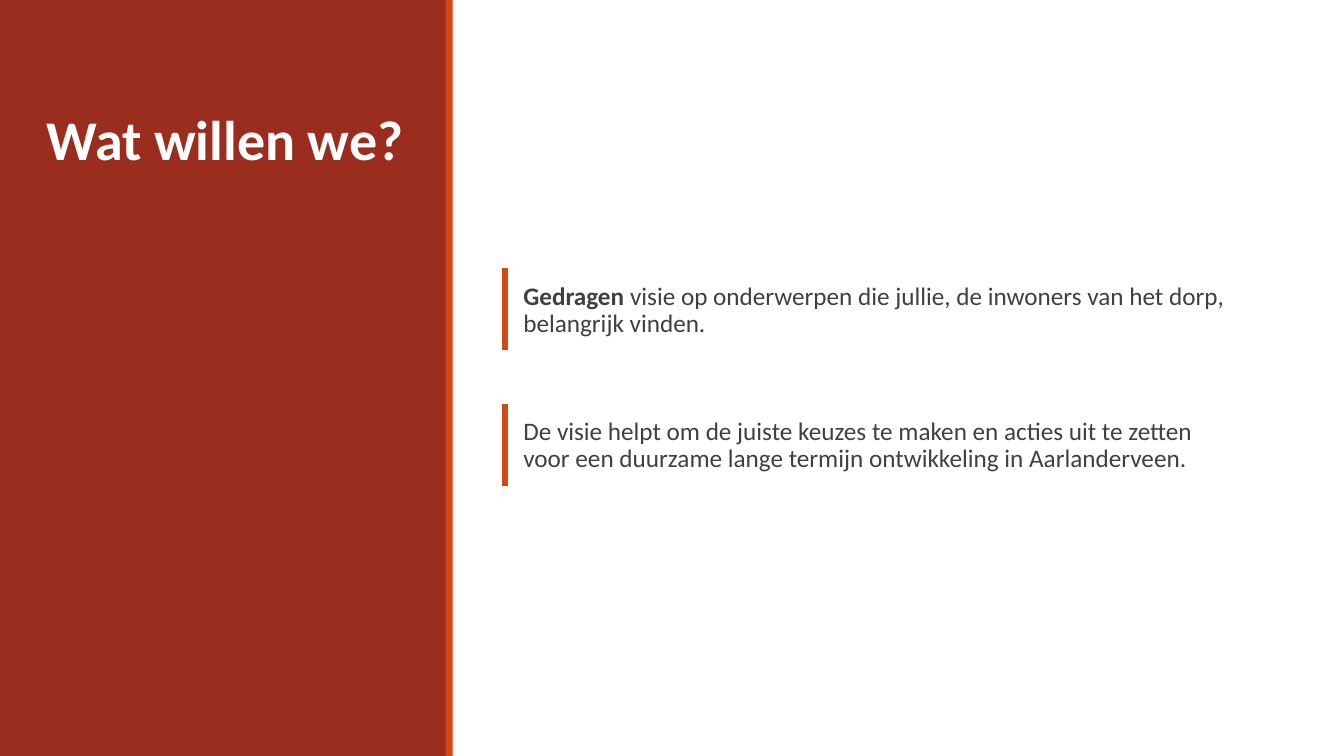
import pptx
import pptx.dml.color
import pptx.enum.shapes
import pptx.enum.text
import pptx.oxml
import pptx.util

Inches = pptx.util.Inches
Pt = pptx.util.Pt
RGBColor = pptx.dml.color.RGBColor
Anchor = pptx.enum.text.MSO_ANCHOR

BRICK = RGBColor(0x9B, 0x2D, 0x1F)
ORANGE = RGBColor(0xD3, 0x48, 0x17)
WHITE = RGBColor(0xFF, 0xFF, 0xFF)
GREY = RGBColor(0x40, 0x40, 0x40)

STATEMENTS = [
    [("Gedragen ", True),
     ("visie op onderwerpen die jullie, de inwoners van het dorp, belangrijk vinden.", False)],
    [("De visie helpt om de juiste keuzes te maken en acties uit te zetten voor een "
      "duurzame lange termijn ontwikkeling in Aarlanderveen.", False)],
]


class VisionSlide:
    font = "Calibri"

    def __init__(self, deck):
        self.page = deck.slides.add_slide(deck.slide_layouts[5])

    def place(self, shape, left, top, width, height):
        shape.left, shape.top = Inches(left), Inches(top)
        shape.width, shape.height = Inches(width), Inches(height)

    def add_span(self, para, text, size, color, bold):
        span = para.add_run()
        span.text = text
        span.font.name = self.font
        span.font.size = Pt(size)
        span.font.color.rgb = color
        span.font.bold = bold

    def panel(self, left, width, color):
        shape = self.page.shapes.add_shape(
            pptx.enum.shapes.MSO_SHAPE.RECTANGLE,
            Inches(left), 0, Inches(width), Inches(7.5))
        shape.shadow.inherit = False
        shape.fill.solid()
        shape.fill.fore_color.rgb = color
        shape.line.fill.background()

    def title(self, text, left, top, width, height):
        box = self.page.shapes.title
        self.place(box, left, top, width, height)
        frame = box.text_frame
        frame.word_wrap = True
        frame.auto_size = pptx.enum.text.MSO_AUTO_SIZE.NONE
        frame.vertical_anchor = Anchor.TOP
        para = frame.paragraphs[0]
        para.alignment = pptx.enum.text.PP_ALIGN.LEFT
        para.space_before = Pt(0)
        para.space_after = Pt(6)
        self.add_span(para, text, 40, WHITE, True)
        box.element.getparent().append(box.element)

    def statements(self, statements, left, top, width, height):
        box = self.page.shapes.add_textbox(0, 0, 0, 0)
        self.place(box, left, top, width, height)
        frame = box.text_frame
        frame.word_wrap = True
        frame.vertical_anchor = Anchor.MIDDLE
        frame.margin_left = frame.margin_right = 0
        for index, spans in enumerate(statements):
            para = frame.add_paragraph() if index else frame.paragraphs[0]
            para.line_spacing = 0.9
            para.space_before = Pt(51.5 if index else 0)
            para.space_after = Pt(6)
            for text, bold in spans:
                self.add_span(para, text, 18, GREY, bold)

    def marker(self, left, top, length):
        line = self.page.shapes.add_connector(
            pptx.enum.shapes.MSO_CONNECTOR.STRAIGHT,
            Inches(left), Inches(top), Inches(left), Inches(top + length))
        line.line.color.rgb = ORANGE
        line.line.width = Pt(4.5)
        line.element.spPr.append(pptx.oxml.parse_xml(
            '<a:effectLst xmlns:a="http://schemas.openxmlformats.org/drawingml/2006/main"/>'))


def main():
    deck = pptx.Presentation()
    deck.slide_width = Inches(13.33)
    deck.slide_height = Inches(7.5)
    slide = VisionSlide(deck)
    slide.panel(0, 4.43, BRICK)
    slide.panel(4.42, 0.07, ORANGE)
    slide.statements(STATEMENTS, 5.19, 2.76, 7.01, 1.98)
    slide.title("Wat willen we?", 0.36, 0.99, 3.91, 0.77)
    for index in range(len(STATEMENTS)):
        slide.marker(5.01, 2.66 + 1.35 * index, 0.81)
    deck.save("out.pptx")


if __name__ == "__main__":
    main()
